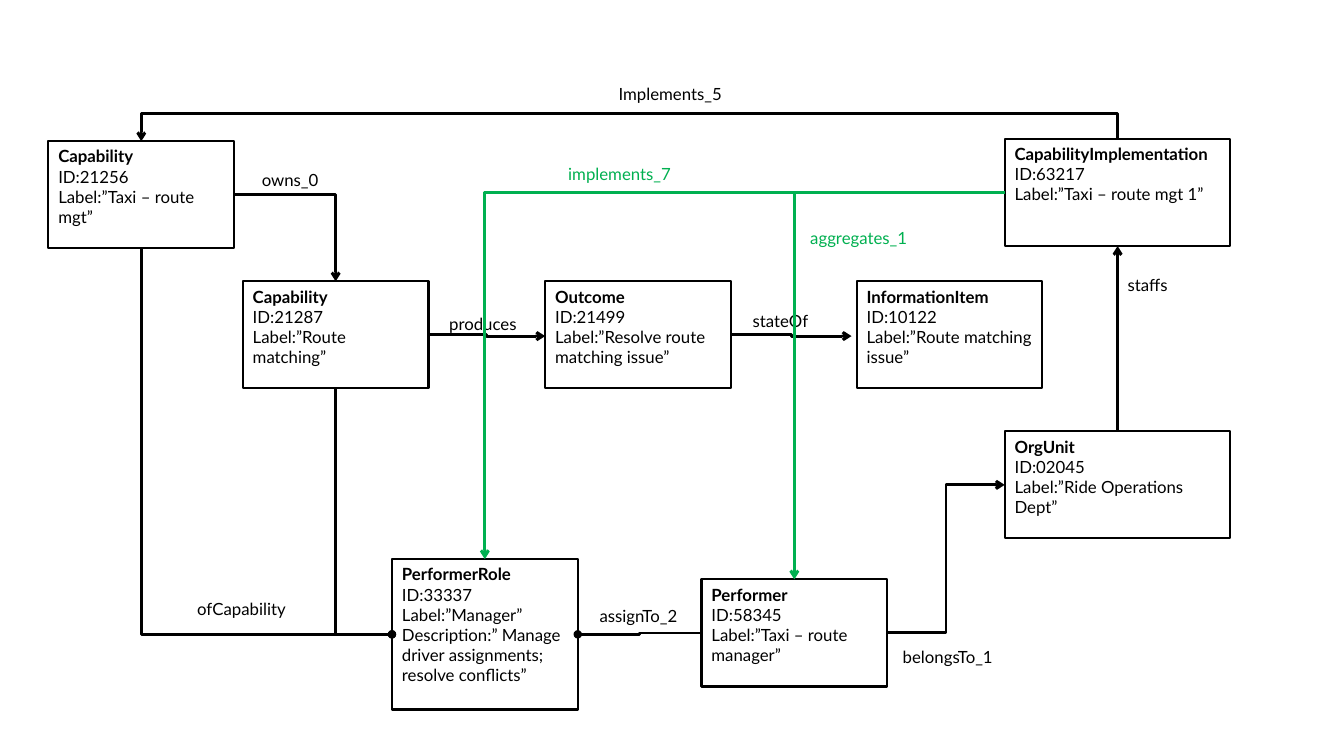
from lxml.etree import SubElement
from pptx import Presentation
from pptx.dml.color import RGBColor
from pptx.enum.shapes import MSO_CONNECTOR, MSO_SHAPE
from pptx.enum.text import MSO_ANCHOR, PP_ALIGN
from pptx.oxml.ns import qn
from pptx.util import Cm, Pt

BLACK, WHITE, GREEN = "000000", "FFFFFF", "00B050"
TOP, LEFT, BOTTOM, RIGHT = range(4)
BOX_WIDTH, WIDE_BOX, BOX_HEIGHT = 4.68, 5.69, 2.7
ARROW, OVAL = ("tailEnd", "arrow"), ("headEnd", "oval")
ONE_BEND = "bentConnector2"


def colour(value):
    return RGBColor.from_string(value)


def add_text(paragraph, text, value=BLACK, bold=False):
    paragraph.alignment = PP_ALIGN.LEFT
    run = paragraph.add_run()
    run.text = text
    run.font.name = "Lato"
    run.font.size = Pt(12)
    run.font.bold = bold
    run.font.color.rgb = colour(value)


def add_entity(slide, left, top, lines, width=BOX_WIDTH, height=BOX_HEIGHT):
    """White box whose first line is the bold entity type."""
    entity = slide.shapes.add_shape(
        MSO_SHAPE.RECTANGLE, Cm(left), Cm(top), Cm(width), Cm(height))
    entity.shadow.inherit = False
    entity.fill.solid()
    entity.fill.fore_color.rgb = colour(WHITE)
    entity.line.color.rgb = colour(BLACK)
    entity.line.width = Pt(1.5)
    frame = entity.text_frame
    frame.word_wrap = True
    frame.vertical_anchor = MSO_ANCHOR.TOP
    for number, line in enumerate(lines):
        paragraph = frame.add_paragraph() if number else frame.paragraphs[0]
        add_text(paragraph, line, bold=number == 0)
    return entity


def side(entity, which):
    """Middle of one side of a box."""
    x = {LEFT: 0, RIGHT: entity.width}.get(which, entity.width // 2)
    y = {TOP: 0, BOTTOM: entity.height}.get(which, entity.height // 2)
    return entity.left + x, entity.top + y


def add_link(slide, start, end, mark=ARROW, value=BLACK, preset=None,
             kind=MSO_CONNECTOR.ELBOW):
    link = slide.shapes.add_connector(kind, *start, *end)
    link.line.color.rgb = colour(value)
    link.line.width = Pt(2)
    properties = link.element.spPr
    if preset:
        properties.find(qn("a:prstGeom")).set("prst", preset)
    tip, style = mark
    SubElement(properties.find(qn("a:ln")), qn(f"a:{tip}"), type=style)
    SubElement(properties, qn("a:effectLst"))
    return link


def add_overhead_link(slide, target, source, peak):
    """Elbow that leaves the source upwards, crosses at peak and drops on the target."""
    (x1, y1), (x2, y2) = target, source
    middle_x, middle_y = (x1 + x2) // 2, (y1 + y2) // 2
    half_rise, half_span = (y1 - y2) // 2, (x2 - x1) // 2
    link = add_link(slide, (middle_x + half_rise, middle_y + half_span),
                    (middle_x - half_rise, middle_y - half_span),
                    ("headEnd", "arrow"))
    properties = link.element.spPr
    properties.find(qn("a:xfrm")).set("rot", str(90 * 60000))
    guides = properties.find(qn("a:prstGeom")).get_or_add_avLst()
    bend = round(100000 * (y1 - peak) / (y1 - y2))
    SubElement(guides, qn("a:gd"), name="adj1", fmla=f"val {bend}")


def add_label(slide, left, top, text, value=BLACK, width=2.82):
    label = slide.shapes.add_textbox(Cm(left), Cm(top), Cm(width), Cm(0.76))
    label.text_frame.word_wrap = True
    add_text(label.text_frame.paragraphs[0], text, value)


def main():
    deck = Presentation()
    deck.slide_width, deck.slide_height = Cm(33.87), Cm(19.05)
    slide = deck.slides.add_slide(deck.slide_layouts[6])

    # Entities
    route_mgt = add_entity(slide, 1.22, 3.56, [
        "Capability", "ID:21256", "Label:”Taxi – route mgt”"])
    implementation = add_entity(slide, 25.32, 3.5, [
        "CapabilityImplementation", "ID:63217", "Label:”Taxi – route mgt 1”"],
        WIDE_BOX)
    matching = add_entity(slide, 6.12, 7.09, [
        "Capability", "ID:21287", "Label:”Route matching”"])
    outcome = add_entity(slide, 13.74, 7.09, [
        "Outcome", "ID:21499", "Label:”Resolve route matching issue”"])
    add_entity(slide, 21.59, 7.09, [
        "InformationItem", "ID:10122", "Label:”Route matching issue”"])
    org_unit = add_entity(slide, 25.32, 10.87, [
        "OrgUnit", "ID:02045", "Label:”Ride Operations Dept”"], WIDE_BOX)
    role = add_entity(slide, 9.88, 14.09, [
        "PerformerRole", "ID:33337", "Label:”Manager”",
        "Description:” Manage driver assignments; resolve conflicts”"],
        height=3.79)
    performer = add_entity(slide, 17.68, 14.6, [
        "Performer", "ID:58345", "Label:”Taxi – route manager”"])

    # Relations between capabilities, outcome and information
    add_overhead_link(slide, side(route_mgt, TOP), side(implementation, TOP),
                      Cm(2.87))
    add_link(slide, side(route_mgt, RIGHT), side(matching, TOP), preset=ONE_BEND)
    add_link(slide, side(matching, RIGHT), (outcome.left, Cm(8.47)))
    add_link(slide, side(outcome, RIGHT), (Cm(21.46), Cm(8.47)))

    # Relations of the role, the performer and the unit
    for capability in (route_mgt, matching):
        add_link(slide, side(role, LEFT), side(capability, BOTTOM), OVAL,
                 preset=ONE_BEND)
    add_link(slide, side(role, RIGHT), side(performer, LEFT), OVAL)
    add_link(slide, side(performer, RIGHT), side(org_unit, LEFT))
    staffs = add_link(slide, side(org_unit, TOP), side(implementation, BOTTOM),
                      kind=MSO_CONNECTOR.STRAIGHT)
    staffs.begin_connect(org_unit, TOP)
    staffs.end_connect(implementation, BOTTOM)

    # Relation names
    for left, top, name in [
            (4.72, 14.96, "ofCapability"), (28.17, 6.81, "staffs"),
            (14.86, 15.14, "assignTo_2"), (22.5, 16.18, "belongsTo_1"),
            (6.35, 4.14, "owns_0"), (11.07, 7.77, "produces"),
            (18.72, 7.7, "stateOf")]:
        add_label(slide, left, top, name)
    add_label(slide, 15.34, 1.98, "Implements_5", width=3.18)

    # Green relations of the implementation
    for target, left, top, name in [
            (role, 14.07, 3.99, "implements_7"),
            (performer, 20.17, 5.61, "aggregates_1")]:
        add_link(slide, side(implementation, LEFT), side(target, TOP),
                 value=GREEN, preset=ONE_BEND)
        add_label(slide, left, top, name, GREEN, 3.18)

    deck.save("out.pptx")


if __name__ == "__main__":
    main()
